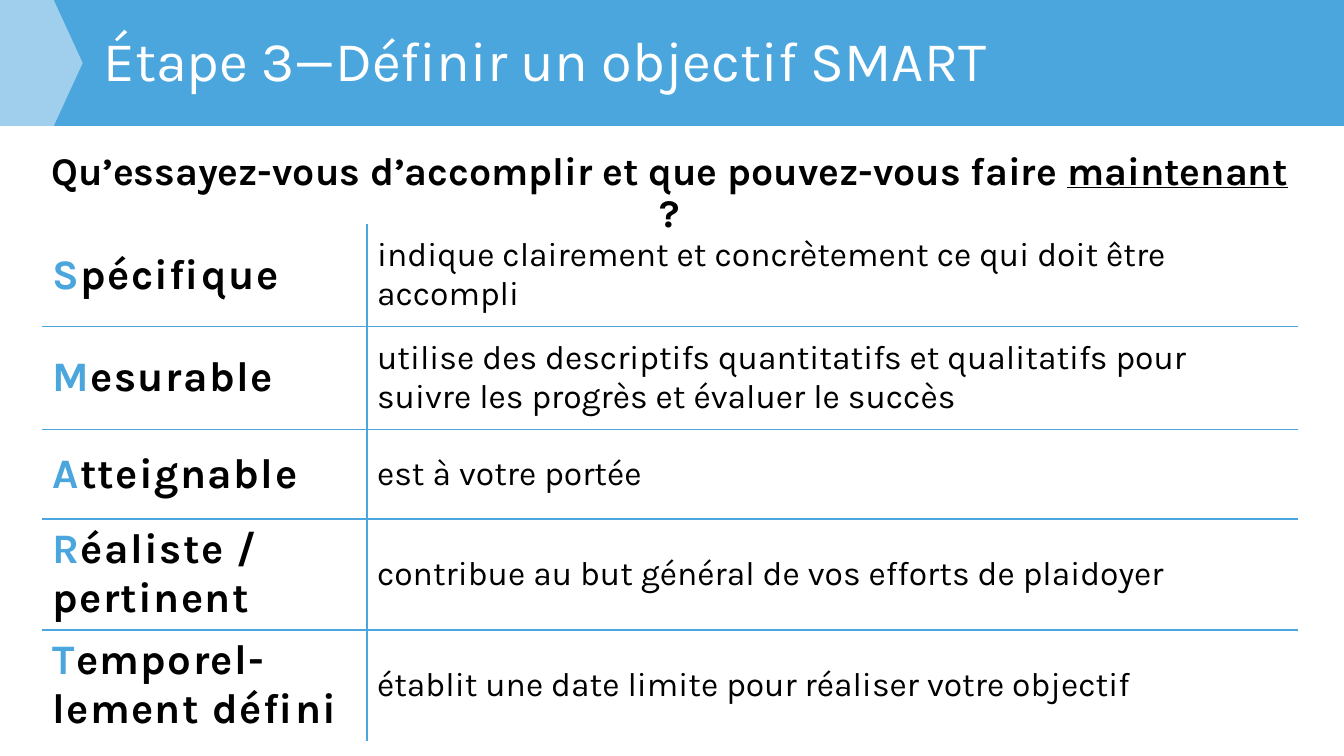
from dataclasses import dataclass

from lxml import etree
from pptx import Presentation
from pptx.dml.color import RGBColor
from pptx.enum.shapes import MSO_SHAPE
from pptx.enum.text import MSO_ANCHOR, PP_ALIGN
from pptx.oxml.ns import qn
from pptx.util import Pt

RECTANGLE, PENTAGON = MSO_SHAPE.RECTANGLE, MSO_SHAPE.PENTAGON
TOP, MIDDLE = MSO_ANCHOR.TOP, MSO_ANCHOR.MIDDLE
LEFT, CENTER = PP_ALIGN.LEFT, PP_ALIGN.CENTER
EMU_PER_PX = 9144


@dataclass(frozen=True)
class Theme:
    font: str = "Karla"
    blue: str = "4BA6DD"
    white: str = "FFFFFF"
    black: str = "000000"
    title: int = 40
    question: int = 28
    term: int = 30
    meaning: int = 24
    rule: int = 1
    tracking: int = 1


QUESTION = ("Qu’essayez-vous d’accomplir et que pouvez-vous faire ", "maintenant ", "?")
CRITERIA = [
    ("Spécifique", "indique clairement et concrètement ce qui doit être accompli", 102),
    ("Mesurable", "utilise des descriptifs quantitatifs et qualitatifs pour suivre "
                  "les progrès et évaluer le succès", 102),
    ("Atteignable", "est à votre portée", 89),
    ("Réaliste / pertinent", "contribue au but général de vos efforts de plaidoyer", 102),
    ("Temporel-lement défini", "établit une date limite pour réaliser votre objectif", 94),
]


def px(*lengths):
    return [length * EMU_PER_PX for length in lengths]


class SlideBuilder:
    """Draws styled elements on the current slide."""

    def __init__(self, deck, theme):
        self.theme = theme
        self.page = deck.slides.add_slide(deck.slide_layouts[6])

    def shape(self, kind, bounds, color, opacity=100):
        shape = self.page.shapes.add_shape(kind, *px(*bounds))
        shape.shadow.inherit = False
        shape.line.fill.background()
        shape.fill.solid()
        shape.fill.fore_color.rgb = RGBColor.from_string(color)
        if opacity < 100:
            tint = shape.fill._xPr.find(qn("a:solidFill"))[0]
            etree.SubElement(tint, qn("a:alpha"), val=str(opacity * 1000))
        return shape

    def span(self, para, text, size, color, bold=False, tracking=0):
        span = para.add_run()
        span.text = text
        font = span.font
        font.name, font.size, font.bold = self.theme.font, Pt(size), bold
        font.color.rgb = RGBColor.from_string(color)
        if tracking:
            font._element.set("spc", str(tracking * 100))
        return span

    def text(self, bounds, anchor, align):
        frame = self.page.shapes.add_textbox(*px(*bounds)).text_frame
        frame.word_wrap = True
        frame.vertical_anchor = anchor
        para = frame.paragraphs[0]
        para.alignment = align
        para.line_spacing = 0.9
        return para

    def borders(self, cell, sides):
        properties = cell._tc.get_or_add_tcPr()
        for place, side in enumerate("LRTB"):
            line = etree.Element(qn("a:ln" + side), w=str(Pt(self.theme.rule)))
            if side in sides:
                fill = etree.SubElement(line, qn("a:solidFill"))
                etree.SubElement(fill, qn("a:srgbClr"), val=self.theme.blue)
            else:
                etree.SubElement(line, qn("a:noFill"))
            properties.insert(place, line)

    def criteria_table(self, left, top, widths, criteria):
        theme = self.theme
        bounds = px(left, top, sum(widths), sum(height for *_, height in criteria))
        table = self.page.shapes.add_table(len(criteria), len(widths), *bounds).table
        table.first_row = table.horz_banding = False
        for column, width in zip(table.columns, px(*widths)):
            column.width = width
        for index, (term, meaning, height) in enumerate(criteria):
            row = table.rows[index]
            row.height = px(height)[0]
            across = ("T" if index else "") + ("B" if index < len(criteria) - 1 else "")
            for cell, inner_side in zip(row.cells, "RL"):
                cell.fill.background()
                cell.vertical_anchor = MIDDLE
                self.borders(cell, across + inner_side)
            term_para, meaning_para = (cell.text_frame.paragraphs[0] for cell in row.cells)
            for part, color in ((term[0], theme.blue), (term[1:], theme.black)):
                self.span(term_para, part, theme.term, color, True, theme.tracking)
            self.span(meaning_para, meaning, theme.meaning, theme.black)


def main():
    deck = Presentation()
    deck.slide_width, deck.slide_height = px(1333, 750)
    theme = Theme()
    builder = SlideBuilder(deck, theme)

    builder.shape(RECTANGLE, (0, 0, 1333, 125), theme.blue)
    arrow = builder.shape(PENTAGON, (0, 0, 82, 125), theme.white, opacity=47)
    arrow.adjustments[0] = 0.35

    title = builder.text((93, 20, 1058, 86), MIDDLE, LEFT)
    builder.span(title, "Étape 3—Définir un objectif SMART", theme.title, theme.white)

    question = builder.text((39, 145, 1250, 78), TOP, CENTER)
    spans = [builder.span(question, part, theme.question, theme.black, True) for part in QUESTION]
    spans[1].font.underline = True

    builder.criteria_table(42, 222, (322, 923), CRITERIA)
    deck.save("out.pptx")


if __name__ == "__main__":
    main()
